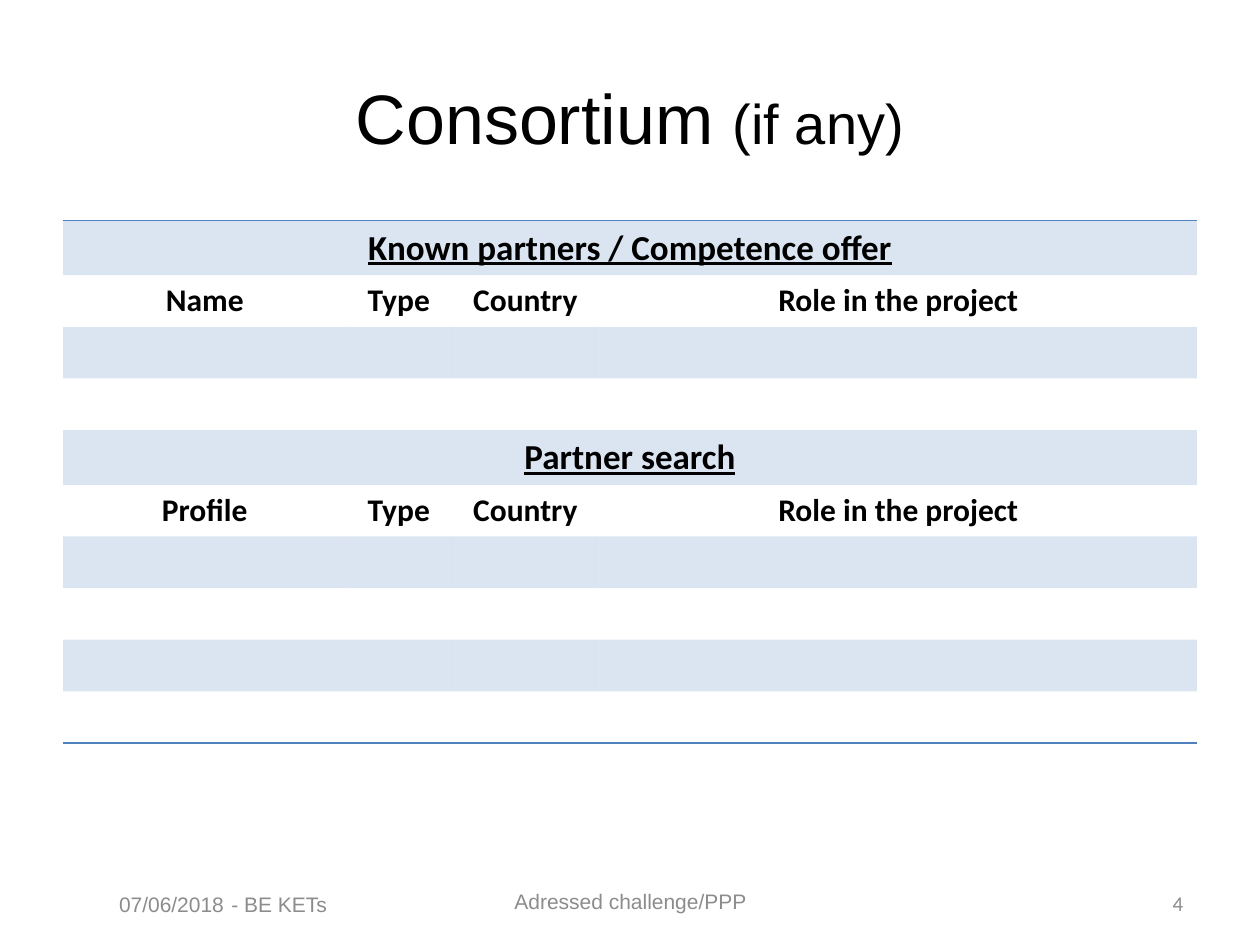
from lxml import etree
from pptx import Presentation
from pptx.dml.color import RGBColor
from pptx.enum.text import MSO_ANCHOR, PP_ALIGN
from pptx.oxml.ns import qn
from pptx.util import Inches, Pt

CENTER, RIGHT = PP_ALIGN.CENTER, PP_ALIGN.RIGHT
MIDDLE = MSO_ANCHOR.MIDDLE
BLACK, GREY, BLUE = "000000", "8C8C8C", "4F81BD"
PLAIN_STYLE = "{2D5ABB26-0587-4C30-8999-92F81FD0307C}"

TITLE = {"size": Pt(40), "name": "Arial", "color": BLACK}
SMALL = {**TITLE, "size": Pt(32)}
NOTE = {"size": Pt(12), "name": "Arial", "color": GREY}
SPACE = {"size": Pt(18), "name": "Calibri", "color": BLACK}
HEAD = {**SPACE, "bold": True}
BAND = {**HEAD, "size": Pt(20), "underline": True}

COLS = [2.25, 0.83, 1.18, 4.74]
ROW = 0.41
LABELS = ["Type", "Country", "Role in the project"]
ROWS = [
    ["Known partners / Competence offer"],
    ["Name", *LABELS],
    [], [],
    ["Partner search"],
    ["Profile", *LABELS],
    [], [], [], [],
]


def rgb(code):
    return RGBColor.from_string(code)


def write(frame, runs, align=CENTER):
    """Fill the first paragraph with (text, format) runs."""
    para = frame.paragraphs[0]
    para.alignment = align
    for text, form in runs:
        run = para.add_run()
        run.text = text
        for key, value in form.items():
            if key == "color":
                run.font.color.rgb = rgb(value)
            else:
                setattr(run.font, key, value)


def add_text(slide, box, runs, align=CENTER):
    frame = slide.shapes.add_textbox(*map(Inches, box)).text_frame
    frame.word_wrap = True
    frame.vertical_anchor = MIDDLE
    write(frame, runs, align)


def tint(cell):
    """Fill the cell with blue at 20 % opacity."""
    cell.fill.solid()
    cell.fill.fore_color.rgb = rgb(BLUE)
    color = cell._tc.tcPr.find(".//" + qn("a:srgbClr"))
    etree.SubElement(color, qn("a:alpha"), val="20000")


def rule(cell, side):
    """Draw a blue line on one side: lnT or lnB."""
    line = etree.Element(qn("a:" + side), w=str(Pt(1)))
    fill = etree.SubElement(line, qn("a:solidFill"))
    etree.SubElement(fill, qn("a:srgbClr"), val=BLUE)
    cell._tc.get_or_add_tcPr().insert(0, line)


def add_grid(slide):
    size = len(ROWS), len(COLS)
    box = map(Inches, (0.5, 1.75, sum(COLS), ROW * len(ROWS)))
    table = slide.shapes.add_table(*size, *box).table
    table.first_row = table.horz_banding = False
    table._tbl.tblPr.find(qn("a:tableStyleId")).text = PLAIN_STYLE
    for col, width in zip(table.columns, COLS):
        col.width = Inches(width)
    for r, texts in enumerate(ROWS):
        table.rows[r].height = Inches(ROW)
        cells = list(table.rows[r].cells)
        for cell in cells:
            if r % 2 == 0:
                tint(cell)
            else:
                cell.fill.background()
            if r == 0:
                rule(cell, "lnT")
            if r == len(ROWS) - 1:
                rule(cell, "lnB")
        form = HEAD
        if len(texts) == 1:
            cells[0].merge(cells[-1])
            form = BAND
        for cell, text in zip(cells, texts):
            write(cell.text_frame, [(text, form)])


def main():
    deck = Presentation()
    deck.slide_width, deck.slide_height = Inches(10), Inches(7.5)
    slide = deck.slides.add_slide(deck.slide_layouts[6])
    date = [("07/06/2018", NOTE), (" ", SPACE), ("- BE KETs", NOTE)]
    add_text(slide, (0.55, 6.94, 2.44, 0.4), date)
    page = [("4", {**NOTE, "name": "Calibri"})]
    add_text(slide, (7.05, 7.02, 2.44, 0.3), page, RIGHT)
    title = [("Consortium ", TITLE), ("(if any)", SMALL)]
    add_text(slide, (0.5, 0.3, 9, 1.25), title)
    add_grid(slide)
    add_text(slide, (3.42, 6.95, 3.17, 0.4), [("Adressed challenge/PPP", NOTE)])
    deck.save("out.pptx")


if __name__ == "__main__":
    main()
